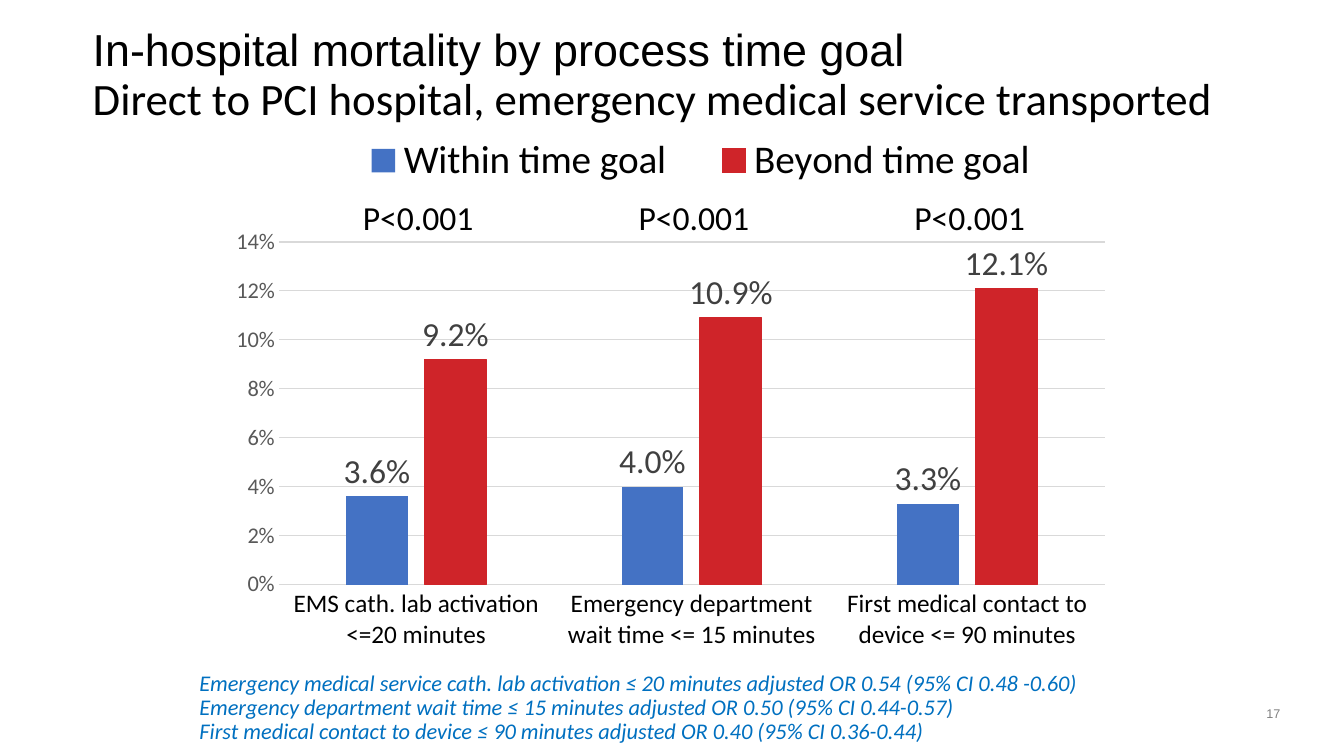
from lxml.etree import SubElement
from pptx import Presentation
from pptx.chart.data import CategoryChartData
from pptx.dml.color import RGBColor
from pptx.enum.chart import XL_CHART_TYPE, XL_LABEL_POSITION, XL_LEGEND_POSITION, XL_TICK_MARK
from pptx.enum.shapes import MSO_SHAPE
from pptx.enum.text import MSO_ANCHOR, PP_ALIGN
from pptx.oxml.ns import qn
from pptx.util import Inches, Pt

BLACK = RGBColor(0x00, 0x00, 0x00)
WHITE = RGBColor(0xFF, 0xFF, 0xFF)
BLUE = RGBColor(0x44, 0x72, 0xC4)
RED = RGBColor(0xCF, 0x24, 0x29)
NOTE_BLUE = RGBColor(0x00, 0x70, 0xC0)
GRID_GREY = RGBColor(0xD9, 0xD9, 0xD9)
AXIS_GREY = RGBColor(0x59, 0x59, 0x59)
LABEL_GREY = RGBColor(0x40, 0x40, 0x40)
PAGE_GREY = RGBColor(0x80, 0x80, 0x80)

# Content
TITLE = "In-hospital mortality by process time goal"
SUBTITLE = "Direct to PCI hospital, emergency medical service transported"
GOALS = [
    "EMS cath. lab activation <=20 minutes",
    "Emergency department wait time <= 15 minutes",
    "First medical contact to device <= 90 minutes",
]
MORTALITY = [
    ("Within time goal", (0.036, 0.04, 0.033), BLUE),
    ("Beyond time goal", (0.092, 0.109, 0.121), RED),
]
P_VALUES = ["P<0.001", "P<0.001", "P<0.001"]
ODDS_RATIOS = [
    "Emergency medical service cath. lab activation ≤ 20 minutes adjusted OR 0.54 (95% CI 0.48 -0.60)",
    "Emergency department wait time ≤ 15 minutes adjusted OR 0.50 (95% CI 0.44-0.57)",
    "First medical contact to device ≤ 90 minutes adjusted OR 0.40 (95% CI 0.36-0.44)",
]
PAGE_NUMBER = "17"

# Fractions of the chart: left, top, width, height
PLOT_LAYOUT = (0.061, 0.207, 0.922, 0.639)
LEGEND_LAYOUT = (0.117, 0, 0.83, 0.11)


def set_font(font, size, color, name="Calibri"):
    font.size = Pt(size)
    font.name = name
    font.color.rgb = color


def write(frame, text, size, color, name="Calibri", align=PP_ALIGN.LEFT,
          wrap=True, spacing=None, italic=None):
    frame.word_wrap = wrap
    frame.text = text
    for paragraph in frame.paragraphs:
        paragraph.alignment = align
        paragraph.line_spacing = spacing
        for run in paragraph.runs:
            set_font(run.font, size, color, name)
            run.font.italic = italic


def add_text(slide, box, *text_and_style, **options):
    frame = slide.shapes.add_textbox(*map(Inches, box)).text_frame
    write(frame, *text_and_style, **options)
    return frame


def place(layout, fractions, inner=False):
    manual = SubElement(layout, qn("c:manualLayout"))
    settings = [("layoutTarget", "inner")] if inner else []
    settings += [("xMode", "edge"), ("yMode", "edge")]
    settings += zip("xywh", fractions)
    for tag, value in settings:
        SubElement(manual, qn(f"c:{tag}")).set("val", str(value))


def add_mortality_chart(slide):
    data = CategoryChartData()
    data.categories = GOALS
    for name, values, _ in MORTALITY:
        data.add_series(name, values)
    chart = slide.shapes.add_chart(
        XL_CHART_TYPE.COLUMN_CLUSTERED, Inches(2.22), Inches(1.3),
        Inches(8.89), Inches(5.32), data).chart
    set_font(chart.font, 10, BLACK)
    chart.has_title = False

    # Columns and their labels
    plot = chart.plots[0]
    plot.gap_width, plot.overlap = 219, -27
    plot.vary_by_categories = False
    for series, (_, _, color) in zip(plot.series, MORTALITY):
        series.format.fill.solid()
        series.format.fill.fore_color.rgb = color
        series.invert_if_negative = False
        labels = series.data_labels
        labels.show_value = True
        labels.number_format = "0.0%"
        labels.number_format_is_linked = False
        labels.position = XL_LABEL_POSITION.OUTSIDE_END
        set_font(labels.font, 24, LABEL_GREY)
    beyond_line = plot.series[1].format.line
    beyond_line.color.rgb = RED
    beyond_line.width = Pt(0.75)

    # Axes
    goal_axis, rate_axis = chart.category_axis, chart.value_axis
    for axis, size, color in ((goal_axis, 18, BLACK), (rate_axis, 16, AXIS_GREY)):
        axis.major_tick_mark = axis.minor_tick_mark = XL_TICK_MARK.NONE
        set_font(axis.tick_labels.font, size, color)
    rate_axis.minimum_scale, rate_axis.maximum_scale = 0, 0.14
    rate_axis.major_unit = 0.02
    rate_axis.tick_labels.number_format = "0%"
    rate_axis.tick_labels.number_format_is_linked = False
    rate_axis.format.line.fill.background()
    for line in (goal_axis.format.line, rate_axis.major_gridlines.format.line):
        line.color.rgb = GRID_GREY
        line.width = Pt(0.75)

    # Legend above the plot
    chart.has_legend = True
    legend = chart.legend
    legend.position = XL_LEGEND_POSITION.BOTTOM
    legend.include_in_layout = False
    set_font(legend.font, 28, BLACK)
    place(legend._element.get_or_add_layout(), LEGEND_LAYOUT)

    plot_area = chart._chartSpace.chart.plotArea
    layout = plot_area.find(qn("c:layout"))
    if layout is None:
        layout = SubElement(plot_area, qn("c:layout"))
        plot_area.insert(0, layout)
    place(layout, PLOT_LAYOUT, inner=True)


def add_odds_ratios(slide):
    note = slide.shapes.add_shape(MSO_SHAPE.RECTANGLE, *map(Inches, (1.88, 6.62, 9.02, 0.83)))
    note.shadow.inherit = False
    note.fill.solid()
    note.fill.fore_color.rgb = WHITE
    note.line.fill.background()
    note.text_frame.vertical_anchor = MSO_ANCHOR.TOP
    write(note.text_frame, "\n".join(ODDS_RATIOS), 16, NOTE_BLUE, spacing=0.9, italic=True)


def main():
    deck = Presentation()
    deck.slide_width, deck.slide_height = Inches(13.33), Inches(7.5)
    slide = deck.slides.add_slide(deck.slide_layouts[6])

    # Title
    title = add_text(slide, (0.92, 0.4, 11.5, 0.72), f"{TITLE}\v{SUBTITLE}",
                     32, BLACK, "Arial", spacing=0.9)
    title.vertical_anchor = MSO_ANCHOR.MIDDLE
    title.margin_left = title.margin_right = title.margin_top = title.margin_bottom = 0
    title.paragraphs[0].runs[1].font.name = "Calibri"

    add_text(slide, (12.42, 6.95, 0.42, 0.26), PAGE_NUMBER, 9, PAGE_GREY, "Arial",
             PP_ALIGN.CENTER)
    add_mortality_chart(slide)
    add_odds_ratios(slide)

    # One p-value above each pair of columns
    for i, p_value in enumerate(P_VALUES):
        add_text(slide, (3.5 + 2.735 * i, 1.9, 1.31, 0.5), p_value, 24, BLACK, wrap=False)

    deck.save("out.pptx")


if __name__ == "__main__":
    main()
